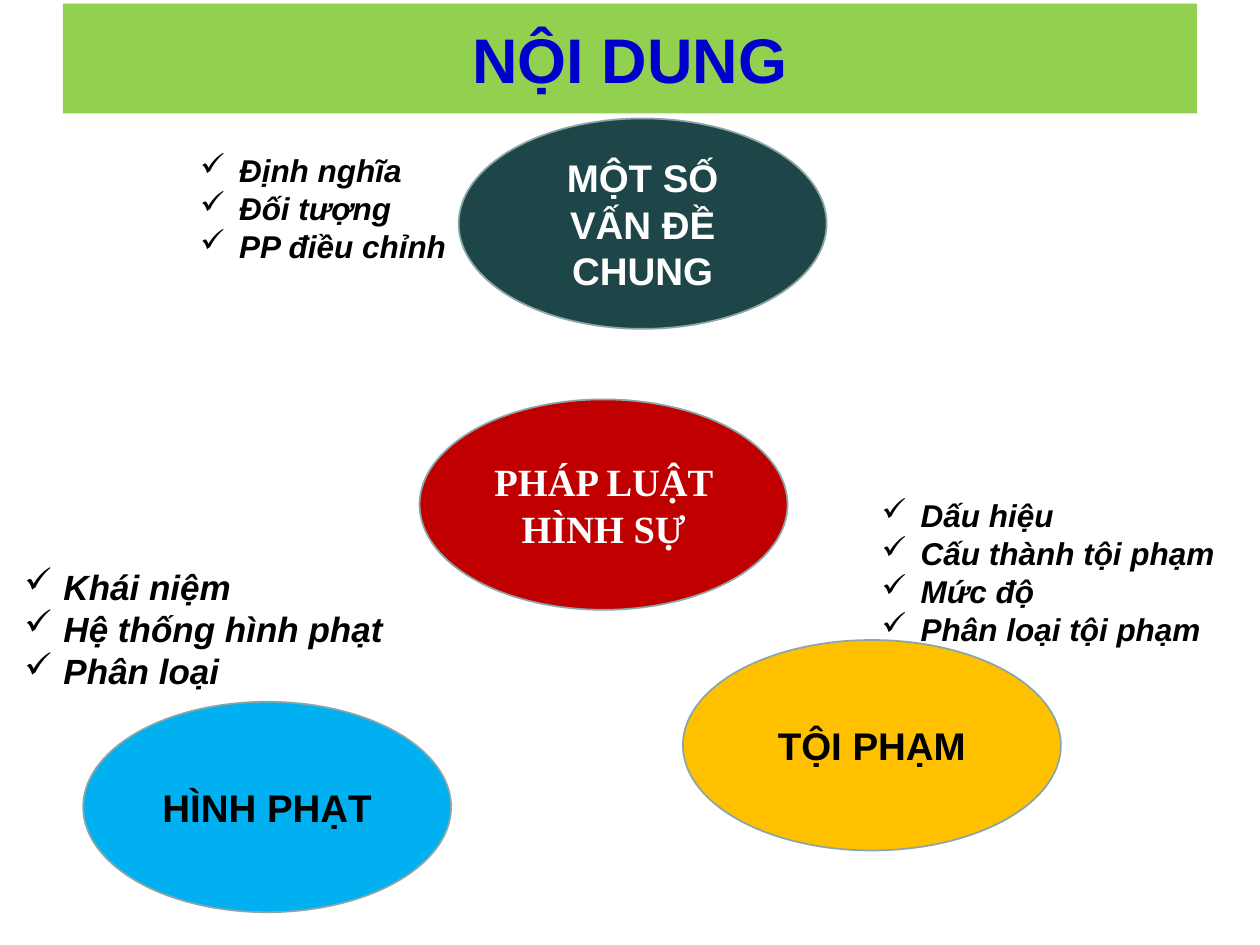
import pptx
import pptx.dml.color
import pptx.enum.shapes
import pptx.enum.text
import pptx.oxml.ns
import pptx.util
from lxml import etree

Inches = pptx.util.Inches
Pt = pptx.util.Pt
SHAPES = pptx.enum.shapes.MSO_SHAPE
ALIGN = pptx.enum.text.PP_ALIGN


def color(value):
    return pptx.dml.color.RGBColor.from_string(value)


def add_bullet(paragraph, mark="✓", indent=0.31):
    properties = paragraph._p.get_or_add_pPr()
    properties.set("marL", str(Inches(indent)))
    properties.set("indent", str(-Inches(indent)))
    bullet = etree.SubElement(properties, pptx.oxml.ns.qn("a:buChar"))
    bullet.set("char", mark)


def write(shape, lines, size=22, font="Arial", ink="000000", italic=False,
          align=ALIGN.CENTER, bullets=False):
    frame = shape.text_frame
    frame.word_wrap = True
    frame.vertical_anchor = pptx.enum.text.MSO_ANCHOR.MIDDLE
    for index, line in enumerate(lines):
        paragraph = frame.add_paragraph() if index else frame.paragraphs[0]
        paragraph.alignment = align
        if bullets:
            add_bullet(paragraph)
        run = paragraph.add_run()
        run.text = line
        run.font.size = Pt(size)
        run.font.name = font
        run.font.bold = True
        run.font.italic = italic
        run.font.color.rgb = color(ink)


def add_block(slide, kind, box, fill=None, line=None):
    block = slide.shapes.add_shape(kind, *map(Inches, box))
    block.shadow.inherit = False
    if fill:
        block.fill.solid()
        block.fill.fore_color.rgb = color(fill)
    else:
        block.fill.background()
    if line:
        block.line.color.rgb = color(line)
        block.line.width = Pt(1)
    else:
        block.line.fill.background()
    return block


def add_title(slide, text):
    banner = add_block(slide, SHAPES.RECTANGLE, (0.5, 0.03, 9, 0.87), "92D050")
    write(banner, [text], size=36, ink="0000CC")


def add_topic(slide, text, left, top, fill, width=2.92, **text_format):
    topic = add_block(slide, SHAPES.FLOWCHART_CONNECTOR,
                      (left, top, width, 1.67), fill, "8AA6A8")
    write(topic, [text], **text_format)


def add_checklist(slide, items, box, size=18):
    checklist = add_block(slide, SHAPES.ROUNDED_RECTANGLE, box)
    write(checklist, items, size=size, italic=True, align=ALIGN.LEFT,
          bullets=True)


def main():
    deck = pptx.Presentation()
    deck.slide_width, deck.slide_height = Inches(10), Inches(7.5)
    slide = deck.slides.add_slide(deck.slide_layouts[6])

    add_title(slide, "NỘI DUNG")

    # Central subject and its three topics
    add_topic(slide, "PHÁP LUẬT HÌNH SỰ", 3.33, 3.17, "C00000",
              font="Times New Roman", ink="FFFFFF")
    add_topic(slide, "MỘT SỐ VẤN ĐỀ CHUNG", 3.64, 0.94, "1E4649", ink="FFFFFF")
    add_topic(slide, "TỘI PHẠM", 5.42, 5.08, "FFC000", width=3)
    add_topic(slide, "HÌNH PHẠT", 0.66, 5.57, "00B0F0")

    # Points covered under each topic
    add_checklist(slide, ["Định nghĩa", "Đối tượng", "PP điều chỉnh"],
                  (1.42, 0.94, 2.5, 1.42))
    add_checklist(slide, ["Dấu hiệu", "Cấu thành tội phạm", "Mức độ",
                          "Phân loại tội phạm"], (6.83, 3.83, 3.01, 1.42))
    add_checklist(slide, ["Khái niệm", "Hệ thống hình phạt", "Phân loại"],
                  (0.03, 4.31, 3.6, 1.36), size=20)

    deck.save("out.pptx")


main()
